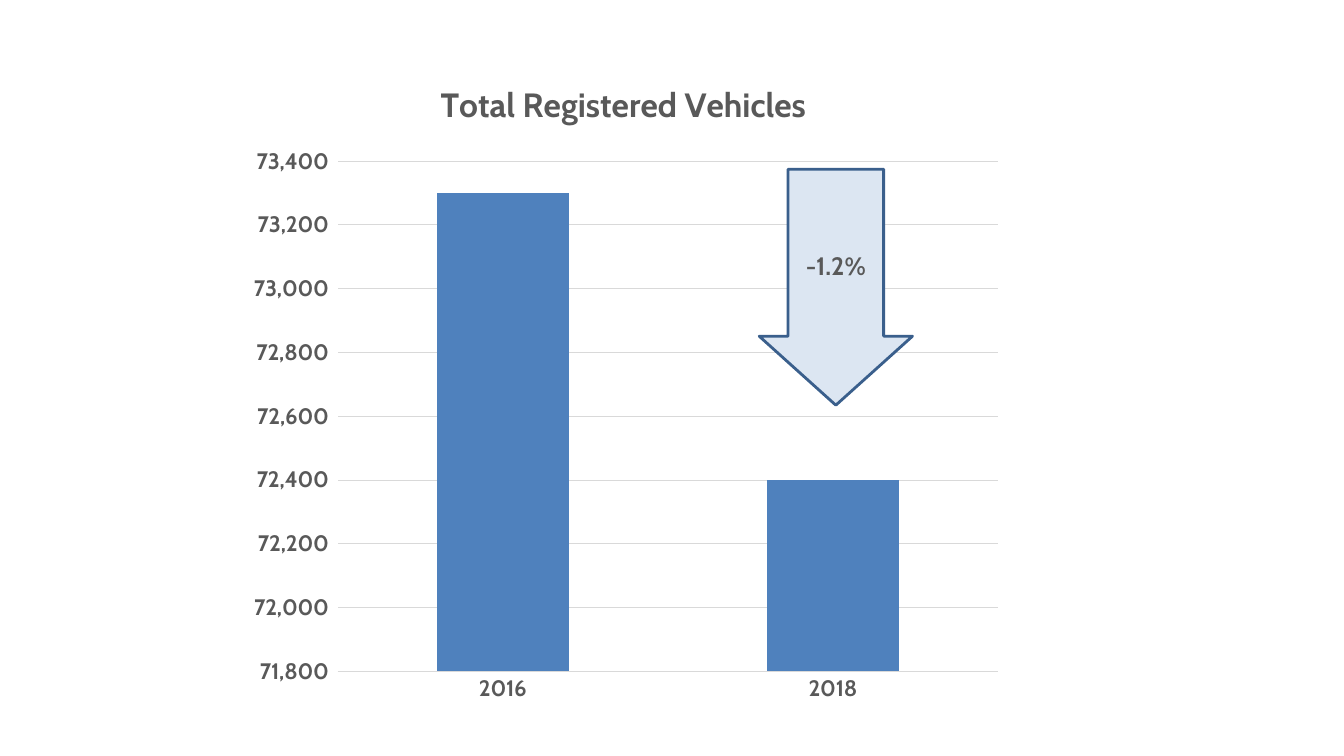
from pptx import Presentation
from pptx.chart.data import CategoryChartData
from pptx.dml.color import RGBColor
from pptx.enum.chart import XL_CHART_TYPE as ChartType, XL_TICK_MARK as TickMark
from pptx.enum.shapes import MSO_SHAPE as Shape
from pptx.enum.text import MSO_ANCHOR as Anchor, PP_ALIGN as Align
from pptx.oxml import parse_xml
from pptx.oxml.ns import nsdecls
from pptx.util import Inches, Pt

FONT = "Cabin"
TEXT_GREY = RGBColor(0x59, 0x59, 0x59)
GRID_GREY = RGBColor(0xD9, 0xD9, 0xD9)
BAR_BLUE = RGBColor(0x4F, 0x81, 0xBD)
ARROW_FILL = RGBColor(0xDC, 0xE6, 0xF2)
ARROW_LINE = RGBColor(0x3A, 0x5F, 0x8C)

VEHICLES = {"2016": 73300, "2018": 72400}
COUNT_FORMAT = r'_(* #,##0_);_(* \(#,##0\);_(* "-"??_);_(@_)'


def style_font(font, size):
    font.name = FONT
    font.size = Pt(size)
    font.bold = True
    font.color.rgb = TEXT_GREY


def style_line(line, color, width):
    line.color.rgb = color
    line.width = Pt(width)


def layout_xml(target="", **fractions):
    """Manual chart layout; x, y, w and h are fractions of the chart."""
    modes = "".join(f'<c:{axis}Mode val="edge"/>' for axis in "xy")
    sizes = "".join(f'<c:{key} val="{value}"/>' for key, value in fractions.items())
    return parse_xml(f'<c:layout {nsdecls("c")}><c:manualLayout>{target}{modes}{sizes}'
                     '</c:manualLayout></c:layout>')


def set_layout(parent, layout, index):
    for old in parent.findall(layout.tag):
        parent.remove(old)
    parent.insert(index, layout)


def add_vehicle_chart(slide):
    data = CategoryChartData(number_format="#,##0")
    data.categories = list(VEHICLES)
    data.add_series("Series 1", list(VEHICLES.values()))
    chart = slide.shapes.add_chart(
        ChartType.COLUMN_STACKED, Inches(2.32), Inches(0.56),
        Inches(7.74), Inches(6.54), data).chart
    style_font(chart.font, 16)
    chart.has_legend = False

    # Title
    chart.has_title = True
    title = chart.chart_title
    title.text_frame.text = "Total Registered Vehicles"
    style_font(title.text_frame.paragraphs[0].runs[0].font, 24)
    title.include_in_layout = False
    set_layout(title._element, layout_xml(x=0.257, y=0.028), 1)

    # Columns
    plot = chart.plots[0]
    plot.gap_width = 150
    plot.overlap = 100
    plot.vary_by_categories = False
    columns = plot.series[0].format.fill
    columns.solid()
    columns.fore_color.rgb = BAR_BLUE

    # Axes and gridlines
    years, counts = chart.category_axis, chart.value_axis
    for axis in (years, counts):
        axis.major_tick_mark = axis.minor_tick_mark = TickMark.NONE
        style_font(axis.tick_labels.font, 16)
    style_line(years.format.line, GRID_GREY, 0.75)
    counts.format.line.fill.background()
    counts.minimum_scale, counts.maximum_scale = 71800, 73400
    counts.major_unit = 200
    counts.tick_labels.number_format = COUNT_FORMAT
    counts.tick_labels.number_format_is_linked = False
    style_line(counts.major_gridlines.format.line, GRID_GREY, 0.75)

    # Plot area
    plot_area = chart._chartSpace.chart.plotArea
    inner = '<c:layoutTarget val="inner"/>'
    set_layout(plot_area, layout_xml(inner, x=0.133, y=0.159, w=0.846, h=0.774), 0)


def add_change_arrow(slide, label):
    arrow = slide.shapes.add_shape(
        Shape.DOWN_ARROW, Inches(7.53), Inches(1.68), Inches(1.52), Inches(2.34))
    arrow.adjustments[0] = 0.624
    arrow.adjustments[1] = 0.45
    arrow.shadow.inherit = False
    arrow.fill.solid()
    arrow.fill.fore_color.rgb = ARROW_FILL
    style_line(arrow.line, ARROW_LINE, 2)
    frame = arrow.text_frame
    frame.text = label
    frame.vertical_anchor = Anchor.MIDDLE
    paragraph = frame.paragraphs[0]
    paragraph.alignment = Align.CENTER
    style_font(paragraph.runs[0].font, 18)


def main():
    deck = Presentation()
    deck.slide_width, deck.slide_height = Inches(13.33), Inches(7.5)
    slide = deck.slides.add_slide(deck.slide_layouts[6])
    add_vehicle_chart(slide)
    add_change_arrow(slide, "-1.2%")
    deck.save("out.pptx")


if __name__ == "__main__":
    main()
